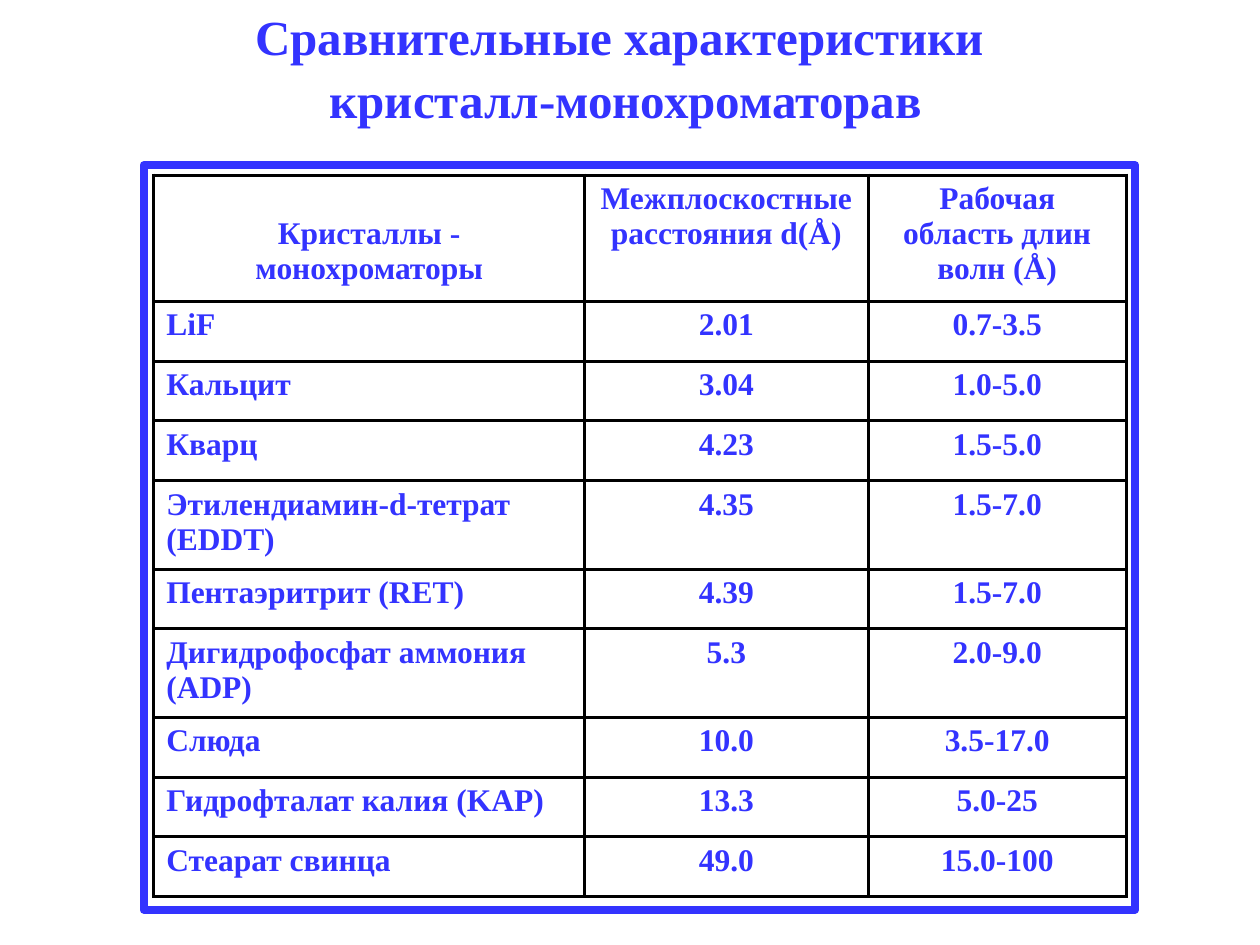
from pptx import Presentation
from pptx.dml.color import RGBColor
from pptx.enum.shapes import MSO_SHAPE
from pptx.enum.text import MSO_ANCHOR, MSO_AUTO_SIZE, PP_ALIGN
from pptx.oxml.ns import qn
from pptx.util import Inches, Pt
from lxml import etree

LEFT, CENTER = PP_ALIGN.LEFT, PP_ALIGN.CENTER
TOP, MIDDLE = MSO_ANCHOR.TOP, MSO_ANCHOR.MIDDLE
RECT = MSO_SHAPE.RECTANGLE
FIXED = MSO_AUTO_SIZE.NONE
FONT = "Times New Roman"
COLORS = {"ink": "3333FF", "paper": "FFFFFF", "grid": "000000"}

TITLE = ["Сравнительные характеристики ", "кристалл-монохроматорав"]
COLS = [3.42, 2.25, 2.05]
SHORT, TALL, HEAD = 0.476, 0.7, 1.0
ROWS = [
    (HEAD, "Кристаллы - монохроматоры", "Межплоскостные расстояния d(Å)",
     "Рабочая область длин волн (Å)"),
    (SHORT, "LiF", "2.01", "0.7-3.5"),
    (SHORT, "Кальцит", "3.04", "1.0-5.0"),
    (SHORT, "Кварц", "4.23", "1.5-5.0"),
    (TALL, "Этилендиамин-d-тетрат (EDDT)", "4.35", "1.5-7.0"),
    (SHORT, "Пентаэритрит (RET)", "4.39", "1.5-7.0"),
    (TALL, "Дигидрофосфат аммония (ADP)", "5.3", "2.0-9.0"),
    (SHORT, "Слюда", "10.0", "3.5-17.0"),
    (SHORT, "Гидрофталат калия (KAP)", "13.3", "5.0-25"),
    (SHORT, "Стеарат свинца", "49.0", "15.0-100"),
]


def rgb(name):
    """Return the named colour."""
    return RGBColor.from_string(COLORS[name])


def paint(item, name):
    """Fill a shape or cell with a named colour."""
    item.fill.solid()
    item.fill.fore_color.rgb = rgb(name)


def write(frame, lines, size=18, align=CENTER, pitch=None):
    """Write lines of bold text as paragraphs of a frame."""
    frame.word_wrap = True
    for i, line in enumerate(lines):
        para = frame.paragraphs[0] if i == 0 else frame.add_paragraph()
        para.alignment = align
        if pitch:
            para.line_spacing = pitch
        run = para.add_run()
        run.text = line
        run.font.name = FONT
        run.font.size = Pt(size)
        run.font.bold = True
        run.font.color.rgb = rgb("ink")


def border(cell, width=2):
    """Draw a line on all four sides of a cell."""
    props = cell._tc.get_or_add_tcPr()
    for i, side in enumerate(("a:lnL", "a:lnR", "a:lnT", "a:lnB")):
        line = etree.Element(qn(side), w=str(Pt(width)))
        fill = etree.SubElement(line, qn("a:solidFill"))
        etree.SubElement(fill, qn("a:srgbClr"), val=COLORS["grid"])
        props.insert(i, line)


def add_title(slide, x, y, w, h):
    """Place the two-line title in its box."""
    title = slide.shapes.title
    title.left, title.top = Inches(x), Inches(y)
    title.width, title.height = Inches(w), Inches(h)
    paint(title, "paper")
    frame = title.text_frame
    frame.auto_size = FIXED
    frame.vertical_anchor = MIDDLE
    write(frame, TITLE, size=28, pitch=1.08)


def add_frame(slide, x, y, w, h):
    """Draw the thick frame behind the table."""
    box = slide.shapes.add_shape(RECT, Inches(x), Inches(y), Inches(w), Inches(h))
    box.shadow.inherit = False
    paint(box, "paper")
    box.line.color.rgb = rgb("ink")
    box.line.width = Pt(4.5)


def add_grid(slide, x, y, w, h):
    """Build the table of crystals in its box."""
    table = slide.shapes.add_table(
        len(ROWS), len(COLS), Inches(x), Inches(y), Inches(w), Inches(h)).table
    table.first_row = table.horz_banding = False
    for col, width in zip(table.columns, COLS):
        col.width = Inches(width * w / sum(COLS))
    scale = h / sum(row[0] for row in ROWS)
    for r, (height, *texts) in enumerate(ROWS):
        table.rows[r].height = Inches(height * scale)
        for c, text in enumerate(texts):
            cell = table.cell(r, c)
            cell.vertical_anchor = TOP
            paint(cell, "paper")
            border(cell)
            write(cell.text_frame, [text], align=CENTER if c or r == 0 else LEFT)
    table.cell(0, 0).margin_top = Inches(0.33)


def main():
    """Build and save the slide."""
    deck = Presentation()
    deck.slide_width, deck.slide_height = Inches(10), Inches(7.5)
    slide = deck.slides.add_slide(deck.slide_layouts[5])
    add_title(slide, 0.75, 0, 8.43, 1.03)
    add_frame(slide, 1.14, 1.31, 7.87, 5.91)
    add_grid(slide, 1.22, 1.39, 7.72, 5.73)
    deck.save("out.pptx")


if __name__ == "__main__":
    main()
